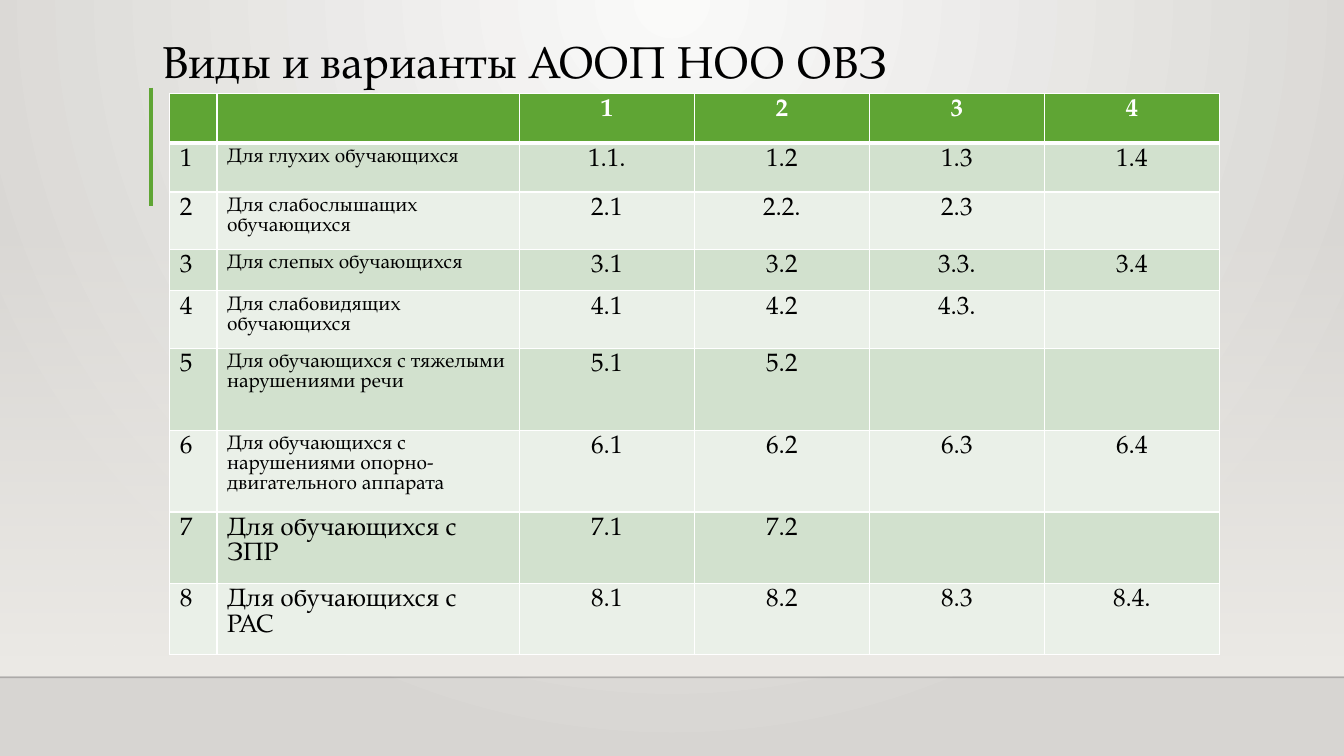
from dataclasses import dataclass

from lxml import etree
from pptx import Presentation
from pptx import util as u
from pptx.dml.color import RGBColor
from pptx.enum import shapes, text
from pptx.oxml import ns

FONT = "TeX Gyre Pagella"
BLACK = RGBColor(0x00, 0x00, 0x00)
WHITE = RGBColor(0xFF, 0xFF, 0xFF)
GREEN = RGBColor(0x5F, 0xA5, 0x34)
BAND_DARK = RGBColor(0xD2, 0xE1, 0xCE)
BAND_LIGHT = RGBColor(0xEA, 0xF0, 0xE8)
GLOW = RGBColor(0xFA, 0xFA, 0xF9)
GREY = RGBColor(0xD7, 0xD5, 0xD2)
HAZE = RGBColor(0xED, 0xEB, 0xE7)
FLOOR_LINE = RGBColor(0x00, 0x00, 0x01)

SLIDE_W, SLIDE_H = 33.87, 19.05
HEADER_HEIGHT = 1.24
COLUMN_WIDTHS = [1.19, 7.62] + [4.41] * 4


@dataclass
class Program:
    learners: str
    variants: list[str]
    height: float
    label_size: int = 14


@dataclass
class Rule:
    start: tuple[float, float]
    end: tuple[float, float]
    color: RGBColor
    width: float
    opacity: int = 100


PROGRAMS = [
    Program("Для глухих обучающихся", ["1.1.", "1.2", "1.3", "1.4"], 1.24),
    Program("Для слабослышащих обучающихся", ["2.1", "2.2.", "2.3", ""], 1.45),
    Program("Для слепых обучающихся", ["3.1", "3.2", "3.3.", "3.4"], 1.04),
    Program("Для слабовидящих обучающихся", ["4.1", "4.2", "4.3.", ""], 1.45),
    Program("Для обучающихся с тяжелыми нарушениями речи", ["5.1", "5.2", "", ""], 2.06),
    Program("Для обучающихся с нарушениями опорно-двигательного аппарата",
            ["6.1", "6.2", "6.3", "6.4"], 2.06),
    Program("Для обучающихся с ЗПР", ["7.1", "7.2", "", ""], 1.8, 18),
    Program("Для обучающихся с РАС", ["8.1", "8.2", "8.3", "8.4."], 1.8, 18),
]

RULES = [
    Rule((0, 17.07), (SLIDE_W, 17.07), FLOOR_LINE, 1, 20),
    Rule((3.81, 2.21), (3.81, 5.18), GREEN, 3),
]


def add_child(parent, tag: str, **attributes: str):
    return etree.SubElement(parent, ns.qn(tag), attributes)


def set_opacity(color_element, percent: int) -> None:
    add_child(color_element, "a:alpha", val=str(percent * 1000))


def set_gradient(fill, first: RGBColor, last: RGBColor) -> None:
    fill.gradient()
    for stop, color, position in zip(fill.gradient_stops, (first, last), (0, 1)):
        stop.color.rgb = color
        stop.position = position


def paint_background(slide) -> None:
    """Radial glow centred on the top edge of the slide."""
    set_gradient(slide.background.fill, GLOW, GREY)
    gradient = slide.element.find(".//" + ns.qn("a:gradFill"))
    linear = gradient.find(ns.qn("a:lin"))
    circle = etree.Element(ns.qn("a:path"), {"path": "circle"})
    add_child(circle, "a:fillToRect", l="43000", t="0", r="43000", b="100000")
    gradient.replace(linear, circle)


def add_haze(slide) -> None:
    """Vertical fade from clear to opaque above the floor line."""
    haze = slide.shapes.add_shape(shapes.MSO_SHAPE.RECTANGLE, 0, u.Cm(5.59),
                                  u.Cm(SLIDE_W), u.Cm(11.43))
    haze.shadow.inherit = False
    haze.line.fill.background()
    set_gradient(haze.fill, HAZE, HAZE)
    haze.fill.gradient_angle = 270
    set_opacity(haze.element.find(".//" + ns.qn("a:srgbClr")), 0)


def add_rule(slide, rule: Rule) -> None:
    line = slide.shapes.add_connector(shapes.MSO_CONNECTOR.STRAIGHT,
                                      *map(u.Cm, rule.start + rule.end))
    line.line.color.rgb = rule.color
    line.line.width = u.Pt(rule.width)
    if rule.opacity < 100:
        set_opacity(line.element.find(".//" + ns.qn("a:srgbClr")), rule.opacity)
    add_child(line.element.spPr, "a:effectLst")


def style_font(paragraph, size: int, color: RGBColor, bold: bool = False) -> None:
    font = paragraph.font
    font.name, font.size, font.bold = FONT, u.Pt(size), bold
    font.color.rgb = color


def add_title(slide) -> None:
    title = slide.shapes.add_textbox(u.Cm(3.84), u.Cm(0.66), u.Cm(26.44), u.Cm(1.7))
    frame = title.text_frame
    frame.word_wrap = True
    frame.vertical_anchor = text.MSO_ANCHOR.BOTTOM
    paragraph = frame.paragraphs[0]
    paragraph.text = "Виды и варианты АООП НОО ОВЗ"
    paragraph.line_spacing = 0.9
    style_font(paragraph, 32, BLACK)


def set_borders(cell, top: int, bottom: int) -> None:
    properties = cell._tc.get_or_add_tcPr()
    for side, width in (("L", 1), ("R", 1), ("T", top), ("B", bottom)):
        border = add_child(properties, f"a:ln{side}", w=str(u.Pt(width)))
        solid = add_child(border, "a:solidFill")
        add_child(solid, "a:srgbClr", val=str(WHITE))


def fill_row(table, row: int, values: list[str], height: float,
             fill: RGBColor, label_size: int) -> None:
    table.rows[row].height = u.Cm(height)
    is_header = row == 0
    for column, value in enumerate(values):
        cell = table.cell(row, column)
        set_borders(cell, top=3 if row == 1 else 1, bottom=3 if is_header else 1)
        cell.fill.solid()
        cell.fill.fore_color.rgb = fill
        paragraph = cell.text_frame.paragraphs[0]
        paragraph.text = value
        if column > 1:
            paragraph.alignment = text.PP_ALIGN.CENTER
        style_font(paragraph, label_size if column == 1 else 18,
                   WHITE if is_header else BLACK, is_header)


def add_program_table(slide) -> None:
    height = HEADER_HEIGHT + sum(program.height for program in PROGRAMS)
    table = slide.shapes.add_table(len(PROGRAMS) + 1, len(COLUMN_WIDTHS), u.Cm(4.28), u.Cm(2.36),
                                   u.Cm(sum(COLUMN_WIDTHS)), u.Cm(height)).table
    table.first_row = table.horz_banding = False
    for column, width in zip(table.columns, COLUMN_WIDTHS):
        column.width = u.Cm(width)
    fill_row(table, 0, ["", "", "1", "2", "3", "4"], HEADER_HEIGHT, GREEN, 18)
    for number, program in enumerate(PROGRAMS, start=1):
        fill_row(table, number, [str(number), program.learners, *program.variants],
                 program.height, BAND_DARK if number % 2 else BAND_LIGHT, program.label_size)


def main() -> None:
    deck = Presentation()
    deck.slide_width, deck.slide_height = u.Cm(SLIDE_W), u.Cm(SLIDE_H)
    slide = deck.slides.add_slide(deck.slide_layouts[6])
    paint_background(slide)
    add_haze(slide)
    for rule in RULES:
        add_rule(slide, rule)
    add_title(slide)
    add_program_table(slide)
    deck.save("out.pptx")


if __name__ == "__main__":
    main()
